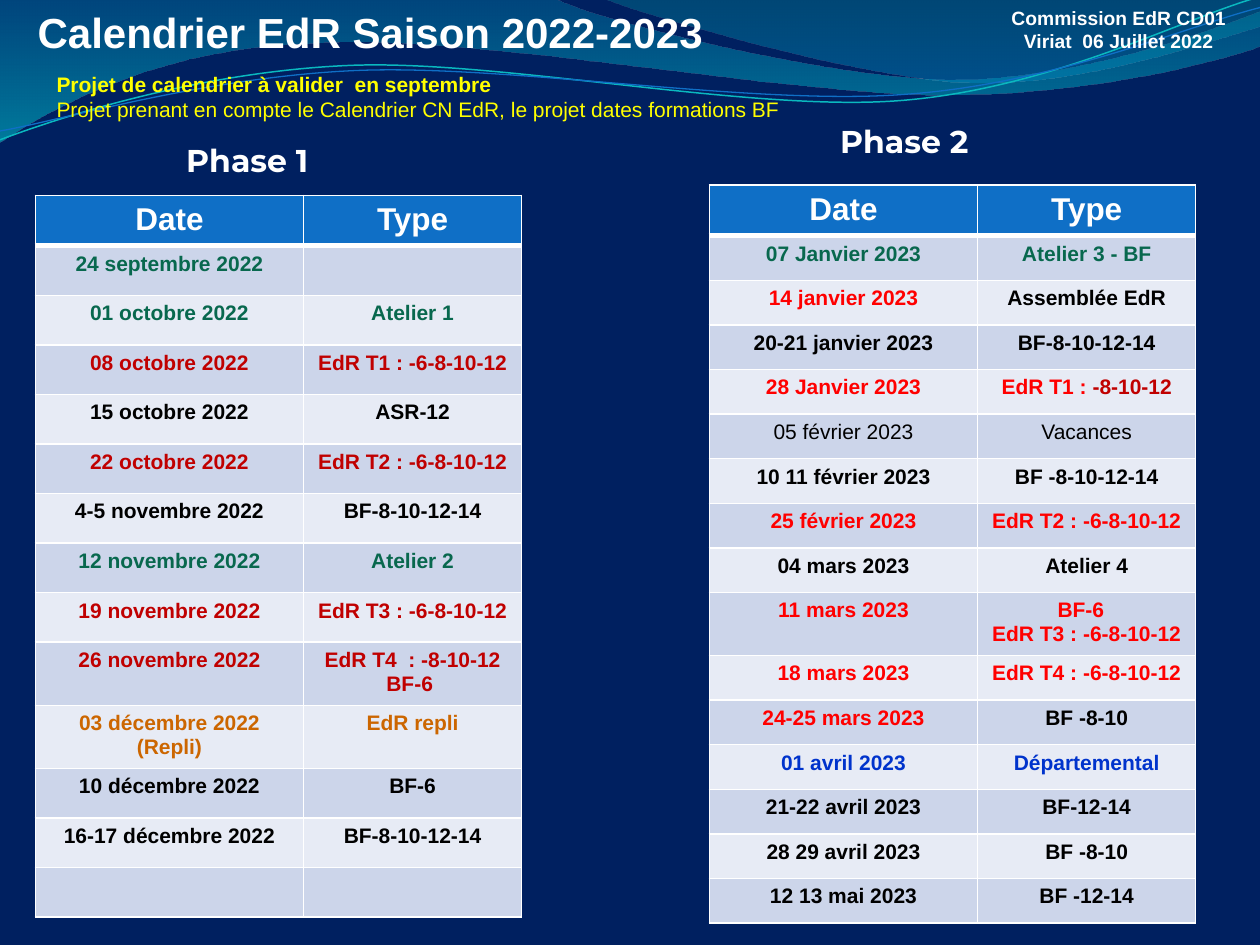
import pptx
import pptx.util
import pptx.dml.color
import pptx.enum.text
import pptx.oxml
from lxml import etree

Inches = pptx.util.Inches
Pt = pptx.util.Pt
qn = pptx.oxml.ns.qn
ALIGN = pptx.enum.text.PP_ALIGN

COLOURS = {
    "navy": "002060", "white": "FFFFFF", "yellow": "FFFF00", "header": "0F6FC6",
    "band_dark": "CCD5EA", "band_light": "E7EBF5",
    "black": "000000", "holiday": "000000", "green": "08684E", "crimson": "C00000",
    "red": "FF0000", "orange": "CC6600", "blue": "0033CC",
    "wave_top": "0074A1", "wave_bottom": "00C6CF",
    "crest_top": "00A1A9", "crest_bottom": "008BBF", "teal": "0AB8BF",
}

# Each text: left, top, width, height, font, size, colour, alignment, [(line, bold)]
TEXTS = [
    (0.2, 0, 6.38, 0.5, "Arial", 24, "white", ALIGN.LEFT,
     [("Calendrier EdR Saison 2022-2023", True)]),
    (1.38, 1.07, 1.34, 0.4, "Montserrat", 18, "white", ALIGN.LEFT, [("Phase 1", True)]),
    (0.35, 0.52, 6.69, 0.5, "Arial", 12, "yellow", ALIGN.LEFT,
     [("Projet de calendrier à valider  en septembre", True),
      ("Projet prenant en compte le Calendrier CN EdR, le projet dates formations BF", False)]),
    (6.57, 0.92, 1.97, 0.4, "Montserrat", 18, "white", ALIGN.LEFT, [("Phase 2", True)]),
    (7.76, 0, 2.24, 0.47, "Arial", 11, "white", ALIGN.CENTER,
     [("Commission EdR CD01", True), ("Viriat  06 Juillet 2022", True)]),
]

# Each row: date, date colour, type, type colour; a tuple as type holds (text, colour) runs
PHASE_1 = [
    ("24 septembre 2022", "green", "", "green"),
    ("01 octobre 2022", "green", "Atelier 1", "green"),
    ("08 octobre 2022", "crimson", "EdR T1 : -6-8-10-12", "crimson"),
    ("15 octobre 2022", "black", "ASR-12", "black"),
    ("22 octobre 2022", "crimson", "EdR T2 : -6-8-10-12", "crimson"),
    ("4-5 novembre 2022", "black", "BF-8-10-12-14", "black"),
    ("12 novembre 2022", "green", "Atelier 2", "green"),
    ("19 novembre 2022", "crimson", "EdR T3 : -6-8-10-12", "crimson"),
    ("26 novembre 2022", "crimson", "EdR T4  : -8-10-12\nBF-6 ", "crimson"),
    ("03 décembre 2022 (Repli)", "orange", "EdR repli", "orange"),
    ("10 décembre 2022", "black", "BF-6", "black"),
    ("16-17 décembre 2022", "black", "BF-8-10-12-14", "black"),
    ("", "black", "", "black"),
]
PHASE_2 = [
    ("07 Janvier 2023", "green", "Atelier 3 - BF", "green"),
    ("14 janvier 2023", "red", "Assemblée EdR", "black"),
    ("20-21 janvier 2023", "black", "BF-8-10-12-14", "black"),
    ("28 Janvier 2023", "red", (("EdR T1 : ", "red"), ("-8-10-12", "crimson")), "red"),
    ("05 février 2023", "holiday", "Vacances", "holiday"),
    ("10 11 février 2023", "black", "BF -8-10-12-14", "black"),
    ("25 février 2023", "red", "EdR T2 : -6-8-10-12", "red"),
    ("04 mars 2023", "black", "Atelier 4", "black"),
    ("11 mars 2023", "red", "BF-6  \nEdR T3 : -6-8-10-12", "red"),
    ("18 mars 2023", "red", "EdR T4 : -6-8-10-12", "red"),
    ("24-25 mars 2023", "red", "BF -8-10", "black"),
    ("01 avril 2023", "blue", "Départemental", "blue"),
    ("21-22 avril 2023", "black", "BF-12-14", "black"),
    ("28 29 avril 2023", "black", "BF -8-10", "black"),
    ("12 13 mai 2023", "black", "BF -12-14", "black"),
]
# Each table: left, top, height, rows, indices of the two-line rows
TABLES = [(0.28, 1.55, 5.73, PHASE_1, (8, 9)), (5.63, 1.47, 5.86, PHASE_2, (8,))]
COLUMN_WIDTHS = (2.13, 1.73)
HEADER_HEIGHT, TALL_HEIGHT = 0.4, 0.5

# Outlines: a pair is a straight step, six numbers are a Bézier step
WAVE = [(0, 0), (4.4, -0.01), (4.76, 0.17, 6.64, 0.63, 7.58, 0.63),
        (8.53, 0.63, 9.58, 0.26, 10, 0.09), (10.01, 0.36),
        (9.83, 0.44, 8.7, 0.76, 7.46, 0.75), (6.22, 0.75, 3.82, 0.28, 2.57, 0.34),
        (1.29, 0.36, 0.46, 0.83, -0.01, 1.13), (0, 0)]
CREST = [(4.79, -0.01), (5.09, 0.11, 6.82, 0.62, 7.69, 0.65),
         (8.56, 0.69, 9.61, 0.32, 10, 0.21), (10, 0), (4.79, -0.01)]
# Each gradient: (colour, opacity in percent) at the top and the bottom
WAVES = [(WAVE, (("wave_top", 45), ("wave_bottom", 55))),
         (CREST, (("crest_top", 30), ("crest_bottom", 45)))]
STRANDS = [
    ([(0, 1.11), (0.48, 0.93, 1.58, 0.57, 2.77, 0.52), (3.95, 0.47, 5.93, 0.89, 7.13, 0.8),
      (8.33, 0.71, 9.38, 0.15, 9.98, -0.02)], "teal", 0.85),
    ([(0, 1.04), (0.47, 0.96, 1.64, 0.61, 2.83, 0.56), (4.03, 0.51, 5.97, 0.84, 7.17, 0.75),
      (8.36, 0.67, 9.41, 0.21, 10, 0.06)], "header", 0.75),
]


def rgb(name):
    return pptx.dml.color.RGBColor.from_string(COLOURS[name])


def add_outline(slide, steps, close):
    """Draw the steps as straight lines, then bend those that are Bézier steps."""
    ends = [(Inches(step[-2]), Inches(step[-1])) for step in steps]
    builder = slide.shapes.build_freeform(*ends[0])
    builder.add_line_segments(ends[1:], close=close)
    shape = builder.convert_to_shape()
    shape.shadow.inherit = False
    for segment, step in zip(list(shape.element.iter(qn("a:lnTo"))), steps[1:]):
        if len(step) == 6:
            curve = etree.Element(qn("a:cubicBezTo"))
            for x, y in zip(step[::2], step[1::2]):
                etree.SubElement(curve, qn("a:pt"), x=str(Inches(x) - shape.left),
                                 y=str(Inches(y) - shape.top))
            segment.getparent().replace(segment, curve)
    return shape


def add_wave(slide, steps, gradient):
    wave = add_outline(slide, steps, True)
    wave.line.fill.background()
    wave.fill.gradient()
    wave.fill.gradient_angle = 270
    for stop, position, (colour, opacity) in zip(wave.fill.gradient_stops, (0, 1), gradient):
        stop.color.rgb = rgb(colour)
        stop.position = position
    values = wave.element.iter(qn("a:srgbClr"))
    for value, (colour, opacity) in zip(values, gradient):
        etree.SubElement(value, qn("a:alpha"), val=str(opacity * 1000))


def add_strand(slide, steps, colour, width):
    strand = add_outline(slide, steps, False)
    strand.fill.background()
    strand.line.color.rgb = rgb(colour)
    strand.line.width = Pt(width)


def style(font, colour, size, bold=True, name="Arial"):
    font.name, font.size, font.bold = name, Pt(size), bold
    font.color.rgb = rgb(colour)


def add_text(slide, left, top, width, height, font, size, colour, alignment, lines):
    frame = slide.shapes.add_textbox(*map(Inches, (left, top, width, height))).text_frame
    frame.word_wrap = True
    frame.text = "\n".join(line for line, bold in lines)
    for paragraph, (line, bold) in zip(frame.paragraphs, lines):
        paragraph.alignment = alignment
        style(paragraph.font, colour, size, bold, font)


def add_border(cell, side, width):
    line = etree.SubElement(cell._tc.get_or_add_tcPr(), qn("a:ln" + side), w=str(Pt(width)))
    fill = etree.SubElement(line, qn("a:solidFill"))
    etree.SubElement(fill, qn("a:srgbClr"), val=COLOURS["white"])


def fill_cell(cell, content, colour, size, background, top, bottom):
    for side, width in (("L", 1), ("R", 1), ("T", top), ("B", bottom)):
        add_border(cell, side, width)
    cell.fill.solid()
    cell.fill.fore_color.rgb = rgb(background)
    if isinstance(content, tuple):
        for text, run_colour in content:
            run = cell.text_frame.paragraphs[0].add_run()
            run.text = text
            run.font.color.rgb = rgb(run_colour)
    else:
        cell.text_frame.text = content
    for paragraph in cell.text_frame.paragraphs:
        paragraph.alignment = ALIGN.CENTER
        style(paragraph.font, colour, size, colour != "holiday")


def add_calendar(slide, left, top, height, rows, tall_rows):
    table = slide.shapes.add_table(
        len(rows) + 1, 2, Inches(left), Inches(top),
        Inches(sum(COLUMN_WIDTHS)), Inches(height)).table
    for column, width in zip(table.columns, COLUMN_WIDTHS):
        column.width = Inches(width)
    table.rows[0].height = Inches(HEADER_HEIGHT)
    for c, heading in enumerate(("Date", "Type")):
        fill_cell(table.cell(0, c), heading, "white", 18, "header", 1, 3)
    row_height = ((height - HEADER_HEIGHT - TALL_HEIGHT * len(tall_rows))
                  / (len(rows) - len(tall_rows)))
    for r, (date, date_colour, kind, kind_colour) in enumerate(rows):
        table.rows[r + 1].height = Inches(TALL_HEIGHT if r in tall_rows else row_height)
        band = "band_light" if r % 2 else "band_dark"
        for c, (content, colour) in enumerate(((date, date_colour), (kind, kind_colour))):
            fill_cell(table.cell(r + 1, c), content, colour, 12, band, 1 if r else 3, 1)


def main():
    deck = pptx.Presentation()
    deck.slide_width, deck.slide_height = Inches(10), Inches(7.5)
    slide = deck.slides.add_slide(deck.slide_layouts[6])
    slide.background.fill.solid()
    slide.background.fill.fore_color.rgb = rgb("navy")
    for wave in WAVES:
        add_wave(slide, *wave)
    for strand in STRANDS:
        add_strand(slide, *strand)
    for text in TEXTS:
        add_text(slide, *text)
    for calendar in TABLES:
        add_calendar(slide, *calendar)
    deck.save("out.pptx")


if __name__ == "__main__":
    main()
